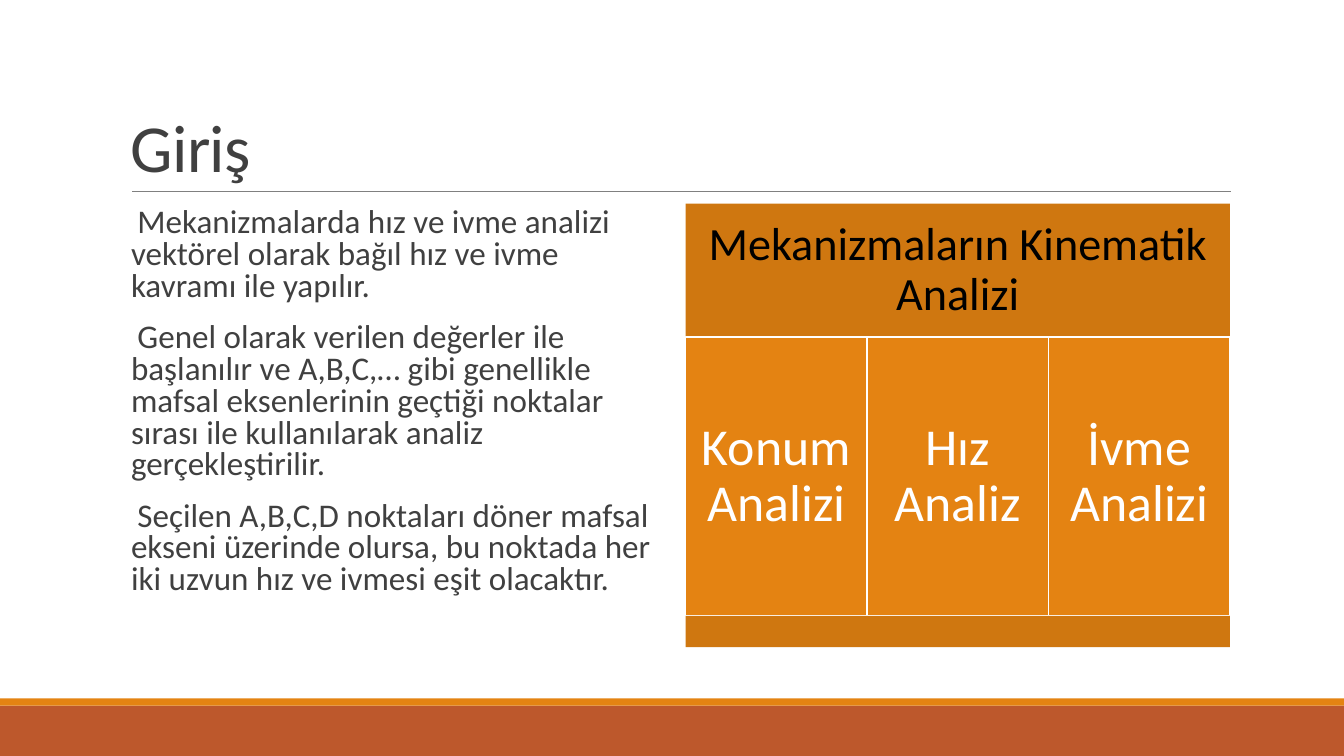
from lxml.etree import SubElement
from pptx import Presentation
from pptx.dml.color import RGBColor
from pptx.enum.shapes import MSO_CONNECTOR, MSO_SHAPE
from pptx.enum.text import MSO_ANCHOR, PP_ALIGN
from pptx.oxml.ns import qn
from pptx.util import Pt

PX = 9144
ORANGE = RGBColor(0xE4, 0x83, 0x12)
DARK_ORANGE = RGBColor(0xCF, 0x77, 0x10)
RUST = RGBColor(0xBD, 0x58, 0x2C)
GRAY = RGBColor(0x80, 0x80, 0x80)
DARK_GRAY = RGBColor(0x40, 0x40, 0x40)
BLACK = RGBColor(0, 0, 0)
WHITE = RGBColor(0xFF, 0xFF, 0xFF)

deck = Presentation()
deck.slide_width, deck.slide_height = 1333 * PX, 750 * PX
slide = deck.slides.add_slide(deck.slide_layouts[6])


def add_block(left, top, width, height, fill, border=None):
    block = slide.shapes.add_shape(
        MSO_SHAPE.RECTANGLE, left * PX, top * PX, width * PX, height * PX)
    block.shadow.inherit = False
    block.fill.solid()
    block.fill.fore_color.rgb = fill
    if border is None:
        block.line.fill.background()
    else:
        block.line.color.rgb = border
        block.line.width = Pt(1.25)
    return block


def write_text(shape, *texts, size, color, spacing, anchor=MSO_ANCHOR.TOP,
               align=PP_ALIGN.LEFT, inset=(10, 5), before=0, after=0,
               indent=0, tracking=0):
    frame = shape.text_frame
    frame.word_wrap = True
    frame.vertical_anchor = anchor
    frame.margin_left = frame.margin_right = inset[0] * PX
    frame.margin_top = frame.margin_bottom = inset[1] * PX
    for number, text in enumerate(texts):
        paragraph = frame.add_paragraph() if number else frame.paragraphs[0]
        paragraph.alignment = align
        paragraph.line_spacing = spacing
        paragraph.space_before = Pt(before)
        paragraph.space_after = Pt(after)
        run = paragraph.add_run()
        run.text = text
        run.font.name = "Calibri"
        run.font.size = Pt(size)
        run.font.color.rgb = color
        if tracking:
            run.font._element.set("spc", str(tracking))
        if indent:
            properties = paragraph._p.get_or_add_pPr()
            properties.set("marL", str(indent * PX))
            properties.set("indent", str(-indent * PX))
            SubElement(properties, qn("a:buChar"), char=" ")


add_block(0, 700, 1333, 50, RUST)
add_block(0, 693, 1333, 7, ORANGE)

title_rule = slide.shapes.add_connector(
    MSO_CONNECTOR.STRAIGHT, 131 * PX, 190 * PX, 1221 * PX, 190 * PX)
title_rule.line.color.rgb = GRAY
title_rule.line.width = Pt(0.5)
SubElement(title_rule._element.spPr, qn("a:effectLst"))

title = slide.shapes.add_textbox(120 * PX, 31 * PX, 1100 * PX, 159 * PX)
write_text(title, "Giriş", size=48, color=DARK_GRAY, spacing=0.85,
           anchor=MSO_ANCHOR.BOTTOM, tracking=-50)

introduction = slide.shapes.add_textbox(120 * PX, 202 * PX, 540 * PX, 440 * PX)
write_text(
    introduction,
    "Mekanizmalarda hız ve ivme analizi vektörel olarak bağıl hız ve ivme "
    "kavramı ile yapılır.",
    "Genel olarak verilen değerler ile başlanılır ve A,B,C,… gibi genellikle "
    "mafsal eksenlerinin geçtiği noktalar sırası ile kullanılarak analiz "
    "gerçekleştirilir.",
    "Seçilen A,B,C,D noktaları döner mafsal ekseni üzerinde olursa, bu noktada "
    "her iki uzvun hız ve ivmesi eşit olacaktır.",
    size=23.6, color=DARK_GRAY, spacing=0.8, inset=(0, 5),
    before=12, after=2, indent=10)

DIAGRAM_LEFT, DIAGRAM_WIDTH = 680, 540
analyses = ["Konum Analizi", "Hız Analiz", "İvme Analizi"]
column_width = DIAGRAM_WIDTH // len(analyses)

heading = add_block(DIAGRAM_LEFT, 202, DIAGRAM_WIDTH, 132, DARK_ORANGE)
write_text(heading, "Mekanizmaların Kinematik Analizi", size=33, color=BLACK,
           spacing=0.9, anchor=MSO_ANCHOR.MIDDLE, align=PP_ALIGN.CENTER,
           inset=(14, 14))

for column, analysis in enumerate(analyses):
    analysis_block = add_block(DIAGRAM_LEFT + column * column_width, 334,
                               column_width, 277, ORANGE, border=WHITE)
    write_text(analysis_block, analysis, size=37, color=WHITE, spacing=0.9,
               anchor=MSO_ANCHOR.MIDDLE, align=PP_ALIGN.CENTER, inset=(15, 15))

add_block(DIAGRAM_LEFT, 611, DIAGRAM_WIDTH, 31, DARK_ORANGE)

deck.save("out.pptx")
